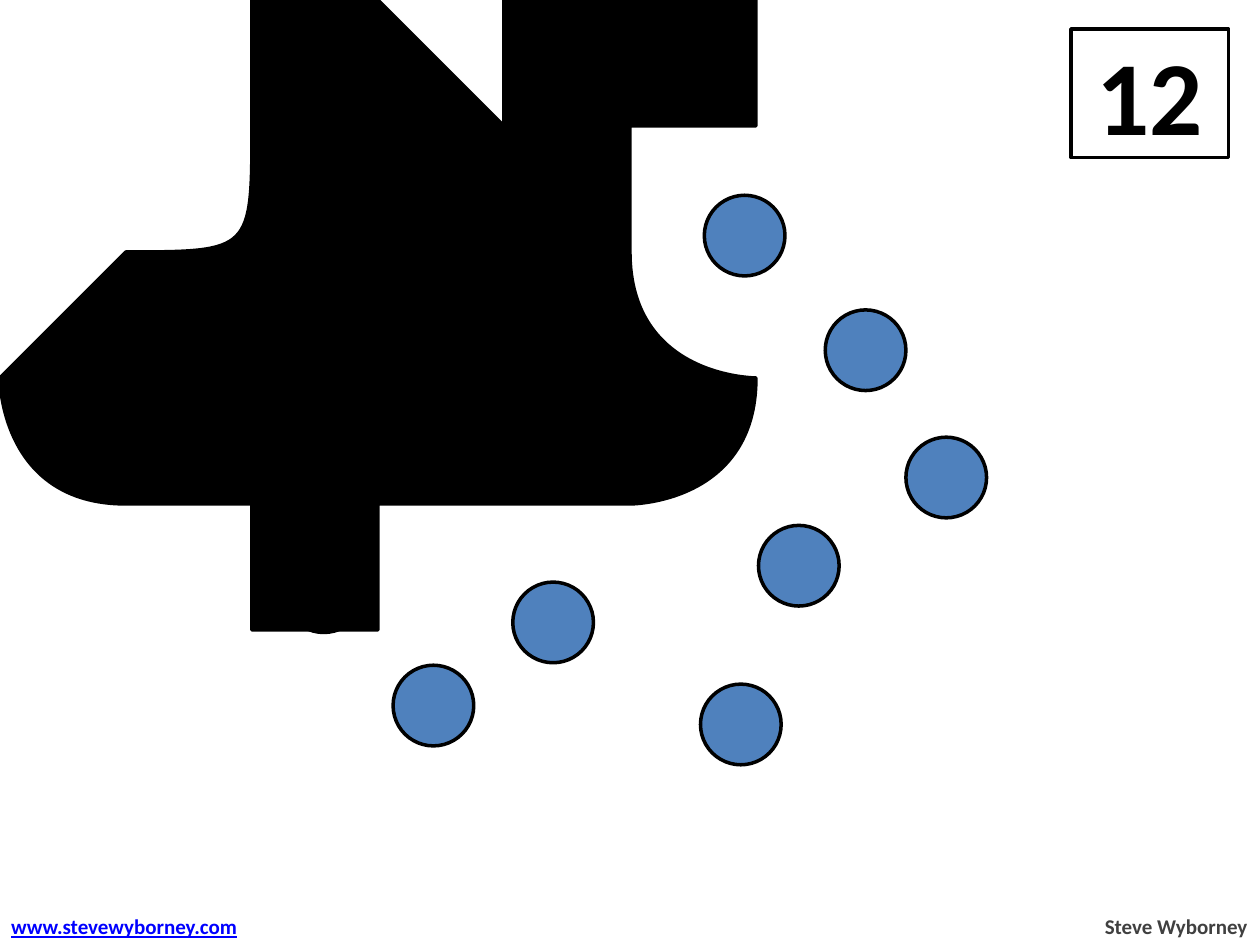
from lxml import etree
from pptx import Presentation
from pptx.dml.color import RGBColor
from pptx.enum.shapes import MSO_SHAPE
from pptx.enum.text import MSO_ANCHOR, MSO_AUTO_SIZE, PP_ALIGN
from pptx.oxml.ns import qn
from pptx.util import Inches, Pt

RECTANGLE, OVAL = MSO_SHAPE.RECTANGLE, MSO_SHAPE.OVAL
MIDDLE, FIT_SHAPE = MSO_ANCHOR.MIDDLE, MSO_AUTO_SIZE.SHAPE_TO_FIT_TEXT
LEFT, CENTER, RIGHT = PP_ALIGN.LEFT, PP_ALIGN.CENTER, PP_ALIGN.RIGHT

BLACK = RGBColor(0x00, 0x00, 0x00)
WHITE = RGBColor(0xFF, 0xFF, 0xFF)
DOT_BLUE = RGBColor(0x4F, 0x81, 0xBD)
LINK_BLUE = RGBColor(0x00, 0x00, 0xFF)
CREDIT_GRAY = RGBColor(0x40, 0x40, 0x40)
FONT = "Calibri"

# Content: the total, the dots (left, top) and the footer lines
TOTAL = "12"
DOT_SIZE = 0.64
DOTS = [
    (4.07, 1.54), (3.1, 2.91), (7.19, 3.47), (4.07, 4.62),
    (3.12, 5.28), (5.56, 5.43), (4.71, 3.11), (6.55, 2.46),
    (5.59, 1.55), (6.02, 4.17), (2.25, 4.38), (2.33, 2.01),
]
FOOTERS = [  # text, left, width, alignment, color, underlined
    ("Steve Wyborney", 8.66, 1.34, RIGHT, CREDIT_GRAY, False),
    ("www.stevewyborney.com", -0.01, 2.05, LEFT, LINK_BLUE, True),
]

# Ink blot that covers some dots: a start point, then Bezier curves
# given as two control points and an end point
BLOT_START = (0.61, 3.67)
BLOT_CURVES = [
    ((0.41, 3.56), (0.28, 3.4), (0.25, 3.21)),
    ((0.23, 3.02), (0.26, 2.76), (0.46, 2.54)),
    ((0.67, 2.33), (1.25, 2.13), (1.49, 1.91)),
    ((1.73, 1.7), (1.86, 1.5), (1.91, 1.25)),
    ((1.96, 1.01), (1.74, 0.62), (1.78, 0.42)),
    ((1.83, 0.22), (2, 0.13), (2.18, 0.07)),
    ((2.37, 0.02), (2.63, -0.01), (2.87, 0.07)),
    ((3.11, 0.14), (3.37, 0.48), (3.63, 0.52)),
    ((3.88, 0.56), (4.17, 0.4), (4.39, 0.32)),
    ((4.61, 0.23), (4.76, 0.03), (4.96, 0.02)),
    ((5.16, 0.02), (5.47, 0.14), (5.57, 0.29)),
    ((5.67, 0.45), (5.6, 0.74), (5.56, 0.93)),
    ((5.52, 1.13), (5.35, 1.22), (5.31, 1.46)),
    ((5.27, 1.7), (5.26, 2.05), (5.33, 2.37)),
    ((5.39, 2.69), (5.75, 3.11), (5.69, 3.39)),
    ((5.64, 3.67), (5.27, 3.95), (5, 4.05)),
    ((4.74, 4.15), (4.37, 4), (4.11, 4.01)),
    ((3.85, 4.02), (3.62, 3.96), (3.47, 4.13)),
    ((3.31, 4.29), (3.36, 4.8), (3.19, 4.99)),
    ((3.02, 5.18), (2.66, 5.28), (2.46, 5.28)),
    ((2.27, 5.27), (2.12, 5.15), (2.03, 4.98)),
    ((1.94, 4.8), (2.02, 4.39), (1.93, 4.21)),
    ((1.83, 4.04), (1.68, 4), (1.46, 3.91)),
    ((1.24, 3.82), (0.81, 3.79), (0.61, 3.67)),
]


def paint(shape, fill):
    shape.shadow.inherit = False
    shape.fill.solid()
    shape.fill.fore_color.rgb = fill
    shape.line.color.rgb = BLACK
    shape.line.width = Pt(2)


def add_preset(slide, preset, left, top, width, height, fill):
    shape = slide.shapes.add_shape(
        preset, Inches(left), Inches(top), Inches(width), Inches(height))
    paint(shape, fill)
    return shape


def write(shape, text, size, color, alignment, underlined=False):
    paragraph = shape.text_frame.paragraphs[0]
    paragraph.text = text
    paragraph.alignment = alignment
    font = paragraph.runs[0].font
    font.name, font.size, font.bold = FONT, Pt(size), True
    font.color.rgb = color
    if underlined:
        font.underline = True


def add_blot(slide):
    points = [point for curve in BLOT_CURVES for point in curve]
    builder = slide.shapes.build_freeform(*BLOT_START, scale=Inches(1) / 1.0)
    builder.add_line_segments(points, close=True)
    blot = builder.convert_to_shape()
    paint(blot, BLACK)
    # Turn every three straight segments into one Bezier curve
    segments = list(blot.element.iter(qn("a:lnTo")))
    for index in range(0, len(points), 3):
        group = segments[index:index + 3]
        curve = etree.Element(qn("a:cubicBezTo"))
        group[0].addprevious(curve)
        for segment in group:
            curve.append(segment[0])
            segment.getparent().remove(segment)


def add_footer(slide, text, left, width, alignment, color, underlined):
    box = slide.shapes.add_textbox(
        Inches(left), Inches(7.2), Inches(width), Inches(0.3))
    box.text_frame.word_wrap = False
    box.text_frame.auto_size = FIT_SHAPE
    write(box, text, 12, color, alignment, underlined)


def main():
    presentation = Presentation()
    presentation.slide_width = Inches(10)
    presentation.slide_height = Inches(7.5)
    slide = presentation.slides.add_slide(presentation.slide_layouts[6])

    total_box = add_preset(slide, RECTANGLE, 8.5, 0.23, 1.25, 1.02, WHITE)
    total_box.text_frame.vertical_anchor = MIDDLE
    write(total_box, TOTAL, 60, BLACK, CENTER)

    for left, top in DOTS:
        add_preset(slide, OVAL, left, top, DOT_SIZE, DOT_SIZE, DOT_BLUE)
    add_blot(slide)
    for footer in FOOTERS:
        add_footer(slide, *footer)

    presentation.save("out.pptx")


if __name__ == "__main__":
    main()
